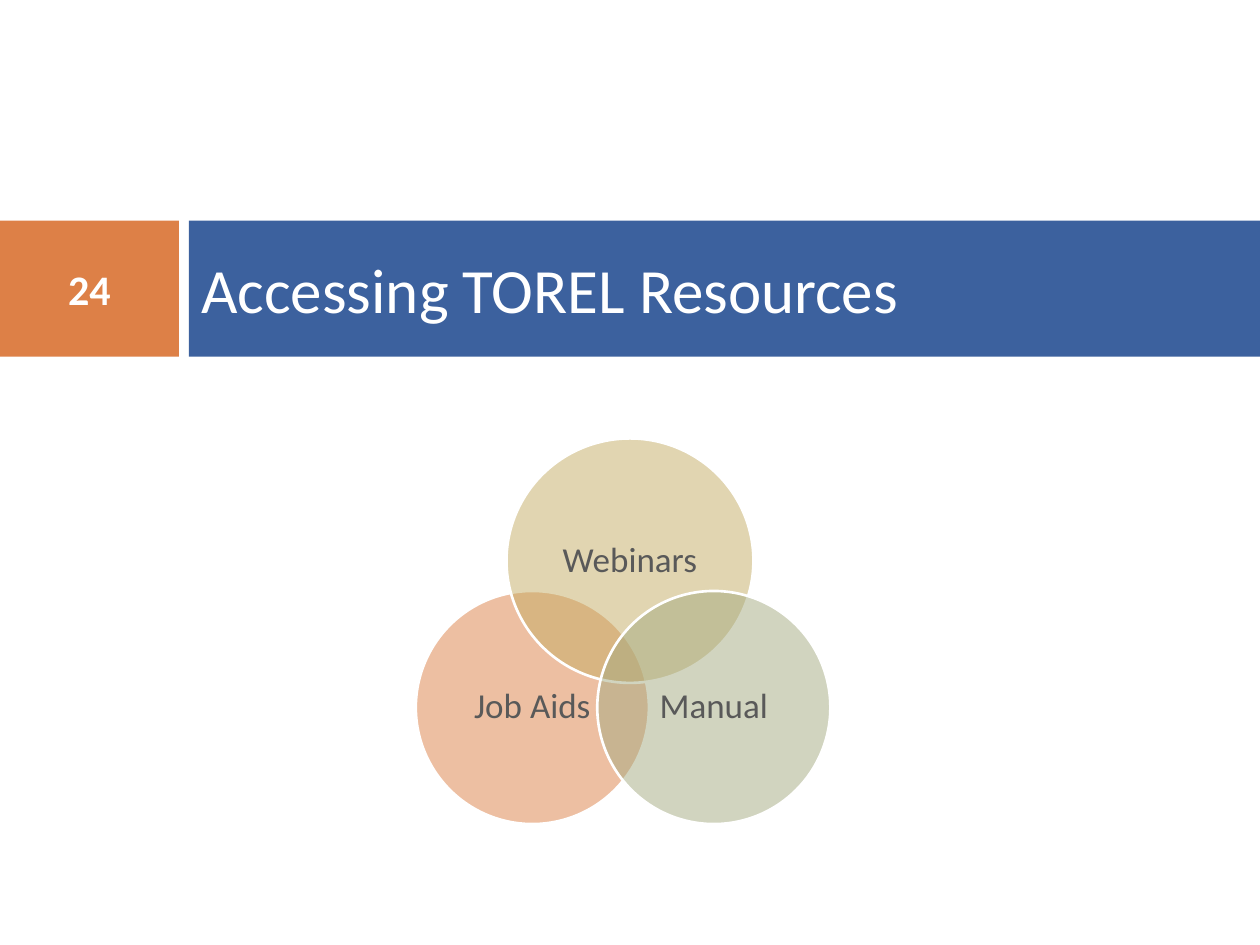
from lxml.etree import SubElement
from pptx import Presentation
from pptx.dml.color import RGBColor
from pptx.enum.shapes import MSO_SHAPE
from pptx.enum.text import MSO_ANCHOR, PP_ALIGN
from pptx.oxml.ns import qn
from pptx.util import Inches, Pt


def paint(target, color):
    target.rgb = RGBColor.from_string(color)


def add_label(kind, box, fill, text, inset, align, **font):
    """Add a filled shape with one line of text, centred vertically."""
    shape = slide.shapes.add_shape(kind, *map(Inches, box))
    shape.shadow.inherit = False
    shape.fill.solid()
    paint(shape.fill.fore_color, fill)
    shape.line.fill.background()
    frame = shape.text_frame
    frame.word_wrap = True
    frame.vertical_anchor = MSO_ANCHOR.MIDDLE
    frame.margin_left = frame.margin_right = Inches(inset)
    para = frame.paragraphs[0]
    para.alignment = align
    run = para.add_run()
    run.text = text
    color = font.pop("color")
    for name, value in {"name": "Calibri", **font}.items():
        setattr(run.font, name, value)
    paint(run.font.color, color)
    return shape


deck = Presentation()
deck.slide_width = Inches(10)
deck.slide_height = Inches(7.5)
slide = deck.slides.add_slide(deck.slide_layouts[6])

# Title band with the slide number
add_label(MSO_SHAPE.RECTANGLE, (0, 1.75, 1.42, 1.08), "DD8047", "24",
          0.1, PP_ALIGN.CENTER, size=Pt(24), bold=True, color="FFFFFF")
add_label(MSO_SHAPE.RECTANGLE, (1.5, 1.75, 8.5, 1.08), "3C619E",
          "Accessing TOREL Resources",
          0.1, PP_ALIGN.LEFT, size=Pt(36), color="FFFFFF")

# Overlapping circles, back to front
circles = [
    ("Job Aids", "DD8047", (3.3, 4.69, 1.85, 1.85)),
    ("Webinars", "C4AD64", (4.02, 3.48, 1.96, 1.94)),
    ("Manual", "A5AB81", (4.74, 4.69, 1.85, 1.85)),
]
for text, fill, box in circles:
    circle = add_label(MSO_SHAPE.OVAL, box, fill, text, 0.08,
                       PP_ALIGN.CENTER, size=Pt(20), color="595959")
    circle.text_frame.paragraphs[0].line_spacing = 0.9
    paint(circle.line.color, "FFFFFF")
    circle.line.width = Pt(1.5)
    tint = circle.fill._xPr.find(qn("a:solidFill"))[0]
    SubElement(tint, qn("a:alpha"), val="50000")

deck.save("out.pptx")
